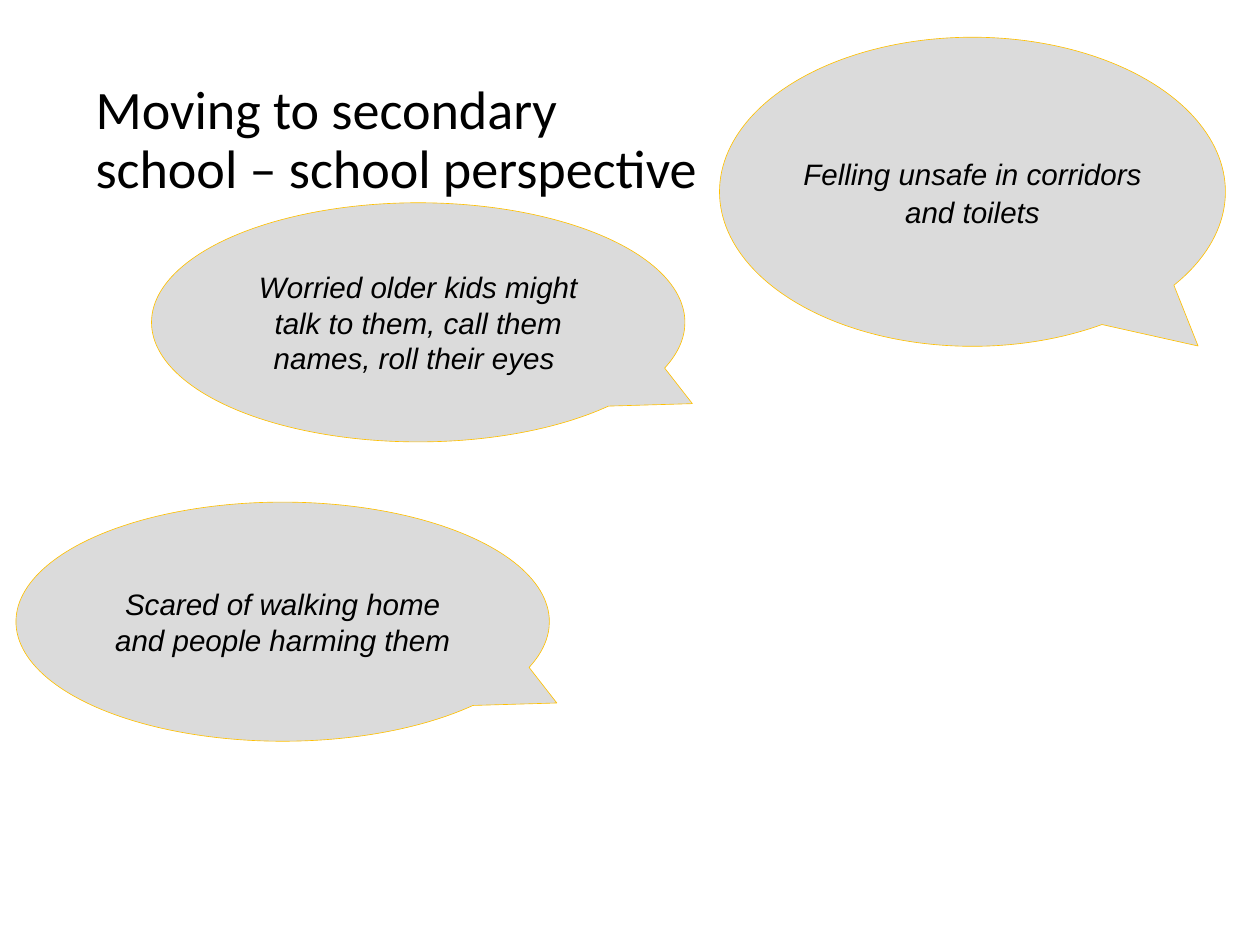
from dataclasses import dataclass

from pptx import Presentation
from pptx.dml.color import RGBColor
from pptx.enum.shapes import MSO_SHAPE
from pptx.enum.text import MSO_ANCHOR, PP_ALIGN
from pptx.util import Inches, Pt


@dataclass(frozen=True)
class Theme:
    """Colours, fonts and sizes of the slide."""
    ink: RGBColor = RGBColor(0, 0, 0)
    bubble: RGBColor = RGBColor(0xDB, 0xDB, 0xDB)
    outline: RGBColor = RGBColor(0xFF, 0xC0, 0x00)
    outline_width: Pt = Pt(0.5)
    title_font: str = "Calibri"
    title_size: Pt = Pt(44)
    quote_font: str = "Arial"
    quote_size: Pt = Pt(24)


THEME = Theme()
TITLE = "Moving to secondary \vschool – school perspective"
TITLE_BOX = (0.98, 0.57, 12.27, 2.06)
SIDE_TAIL = (0.514, 0.34)
CORNER_TAIL = (0.446, 0.499)
LOOSE_SPACING = {"line_spacing": 1.07, "space_after": Pt(8)}
QUOTES = [
    ("Worried older kids might talk to them, call them names, roll their eyes ",
     (1.71, 2.29, 6.02, 2.7), SIDE_TAIL, {}),
    ("Felling unsafe in corridors and toilets",
     (8.12, 0.42, 5.71, 3.49), CORNER_TAIL, LOOSE_SPACING),
    ("Scared of walking home and people harming them",
     (0.18, 5.67, 6.02, 2.7), SIDE_TAIL, {}),
]


def apply_format(target, values):
    """Set each named attribute on the target."""
    for name, value in values.items():
        setattr(target, name, value)


def write_text(shape, text, para_format, font_format):
    """Fill a shape with one wrapped, vertically centred paragraph."""
    frame = shape.text_frame
    apply_format(frame, {"word_wrap": True, "vertical_anchor": MSO_ANCHOR.MIDDLE})
    para = frame.paragraphs[0]
    para.text = text
    apply_format(para, para_format)
    for span in para.runs:
        apply_format(span.font, font_format)
        span.font.color.rgb = THEME.ink


def add_title(page, box):
    """Place the two-line heading in the box."""
    shape = page.shapes.add_textbox(*map(Inches, box))
    write_text(shape, TITLE, {"line_spacing": 0.9},
               {"name": THEME.title_font, "size": THEME.title_size})


def add_quote(page, text, box, tail, spacing):
    """Place a speech bubble in the box, with its tail tip relative to the centre."""
    bubble = page.shapes.add_shape(MSO_SHAPE.OVAL_CALLOUT, *map(Inches, box))
    bubble.adjustments[0], bubble.adjustments[1] = tail
    bubble.shadow.inherit = False
    bubble.fill.solid()
    bubble.fill.fore_color.rgb = THEME.bubble
    bubble.line.color.rgb = THEME.outline
    bubble.line.width = THEME.outline_width
    write_text(bubble, text, {"alignment": PP_ALIGN.CENTER, **spacing},
               {"name": THEME.quote_font, "size": THEME.quote_size, "italic": True})


def main():
    """Build and save the slide."""
    deck = Presentation()
    apply_format(deck, {"slide_width": Inches(14.22), "slide_height": Inches(10.67)})
    page = deck.slides.add_slide(deck.slide_layouts[6])
    add_title(page, TITLE_BOX)
    for quote in QUOTES:
        add_quote(page, *quote)
    deck.save("out.pptx")


if __name__ == "__main__":
    main()
